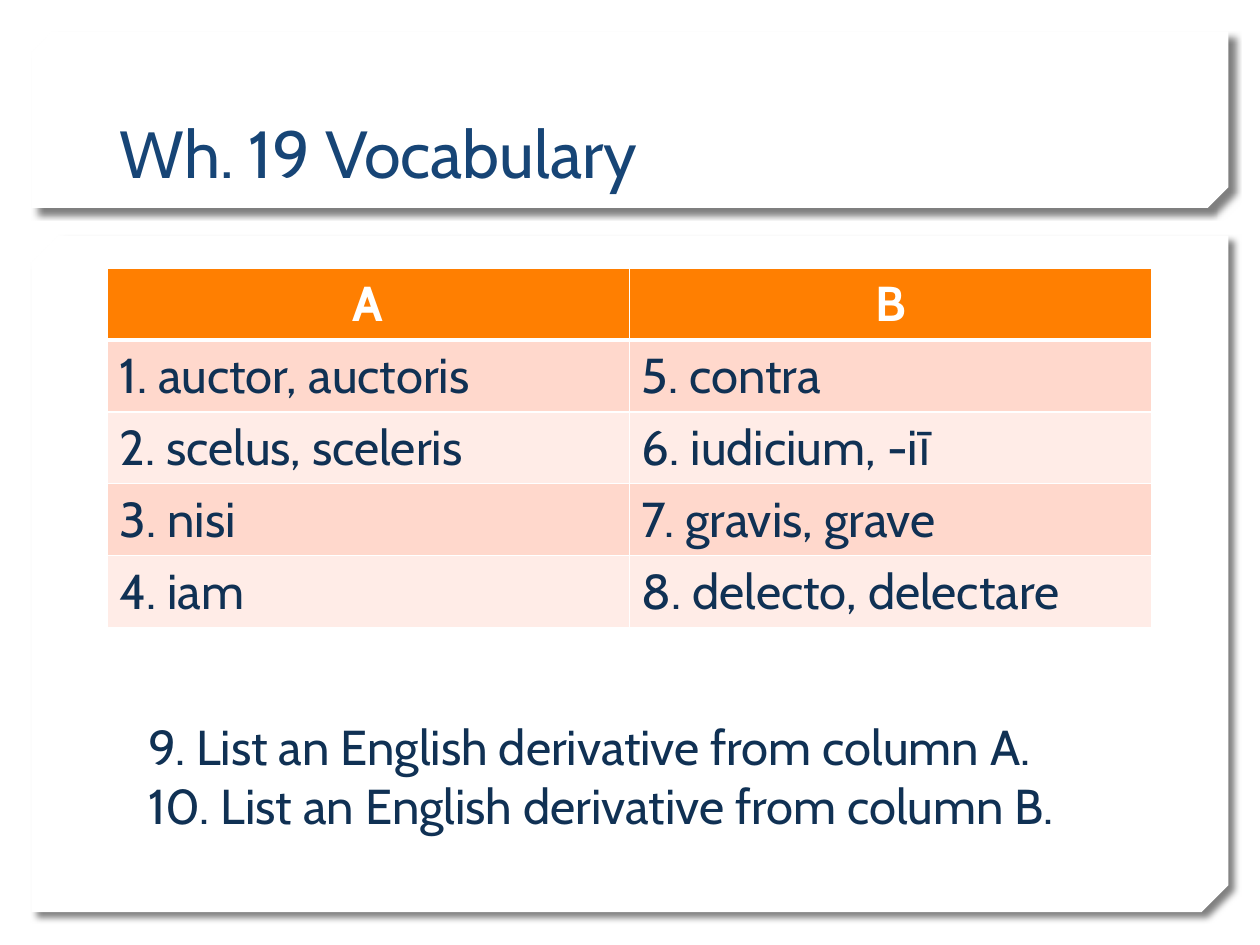
from pptx import Presentation
from pptx.dml.color import RGBColor
from pptx.enum.shapes import MSO_SHAPE as Shape
from pptx.enum.text import MSO_ANCHOR as Anchor, PP_ALIGN as Align
from pptx.oxml import parse_xml
from pptx.oxml.ns import nsdecls
from pptx.util import Inches, Pt

FONT = "Cabin"
WHITE, NAVY, BLUE, ORANGE = "FFFFFF", "103154", "174576", "FF7F01"
BANDS = ["FFD8CC", "FFECE7"]
MARGIN, CONTENT_WIDTH = 0.85, 8.29
ROW_HEIGHT = 0.57

WORDS = [
    ("A", "B"),
    ("1. auctor, auctoris", "5. contra"),
    ("2. scelus, sceleris", "6. iudicium, -iī"),
    ("3. nisi", "7. gravis, grave"),
    ("4. iam", "8. delecto, delectare"),
]
TASKS = [
    "9. List an English derivative from column A.",
    "10. List an English derivative from column B.",
]


def color(value):
    return RGBColor.from_string(value)


def style_text(frame, size, value, bold=False, align=Align.LEFT):
    for para in frame.paragraphs:
        para.alignment = align
        for span in para.runs:
            span.font.name = FONT
            span.font.size = Pt(size)
            span.font.bold = bold
            span.font.color.rgb = color(value)


def add_panel(page, top, height, snip):
    """White sheet with its lower right corner cut and a soft shadow."""
    panel = page.shapes.add_shape(Shape.SNIP_2_DIAG_RECTANGLE, Inches(0.25),
                                  Inches(top), Inches(9.5), Inches(height))
    panel.adjustments[0] = 0
    panel.adjustments[1] = snip
    panel.fill.solid()
    panel.fill.fore_color.rgb = color(WHITE)
    panel.line.fill.background()
    properties = panel._element.spPr
    properties.xfrm.set("flipV", "1")
    properties.append(parse_xml(
        f'<a:effectLst {nsdecls("a")}>'
        f'<a:outerShdw blurRad="{Pt(4)}" dist="{Pt(5)}" dir="2700000" '
        'algn="tl" rotWithShape="0">'
        '<a:srgbClr val="000000"><a:alpha val="50000"/></a:srgbClr>'
        '</a:outerShdw></a:effectLst>'))


def add_text(page, text, left, top, width, height, size, value, anchor=Anchor.TOP):
    box = page.shapes.add_textbox(Inches(left), Inches(top), Inches(width), Inches(height))
    frame = box.text_frame
    frame.word_wrap = True
    frame.vertical_anchor = anchor
    frame.text = text
    style_text(frame, size, value)


def add_borders(cell, top=1, bottom=1):
    """White cell borders, with widths in points."""
    properties = cell._tc.get_or_add_tcPr()
    for side, width in (("L", 1), ("R", 1), ("T", top), ("B", bottom)):
        properties.append(parse_xml(
            f'<a:ln{side} {nsdecls("a")} w="{Pt(width)}"><a:solidFill>'
            f'<a:srgbClr val="{WHITE}"/></a:solidFill></a:ln{side}>'))


def add_word_table(page):
    table = page.shapes.add_table(
        len(WORDS), 2, Inches(MARGIN), Inches(2.13),
        Inches(CONTENT_WIDTH), Inches(ROW_HEIGHT * len(WORDS))).table
    for row, words in enumerate(WORDS):
        header = row == 0
        for column, word in enumerate(words):
            cell = table.cell(row, column)
            cell.text = word
            if header:
                style_text(cell.text_frame, 28, WHITE, True, Align.CENTER)
            else:
                style_text(cell.text_frame, 28, NAVY)
            add_borders(cell, top=3 if row == 1 else 1, bottom=3 if header else 1)
            cell.fill.solid()
            cell.fill.fore_color.rgb = color(ORANGE if header else BANDS[(row - 1) % 2])


def main():
    deck = Presentation()
    deck.slide_width, deck.slide_height = Inches(10), Inches(7.5)
    page = deck.slides.add_slide(deck.slide_layouts[6])
    add_panel(page, 1.87, 5.37, 0.04)
    add_panel(page, 0.25, 1.4, 0.117)
    add_text(page, "Wh. 19 Vocabulary", MARGIN, 0.32, CONTENT_WIDTH, 1.25,
             38, BLUE, Anchor.BOTTOM)
    add_word_table(page)
    add_text(page, "\n".join(TASKS), 1.08, 5.64, 7.84, 1.04, 28, NAVY)
    deck.save("out.pptx")


if __name__ == "__main__":
    main()
